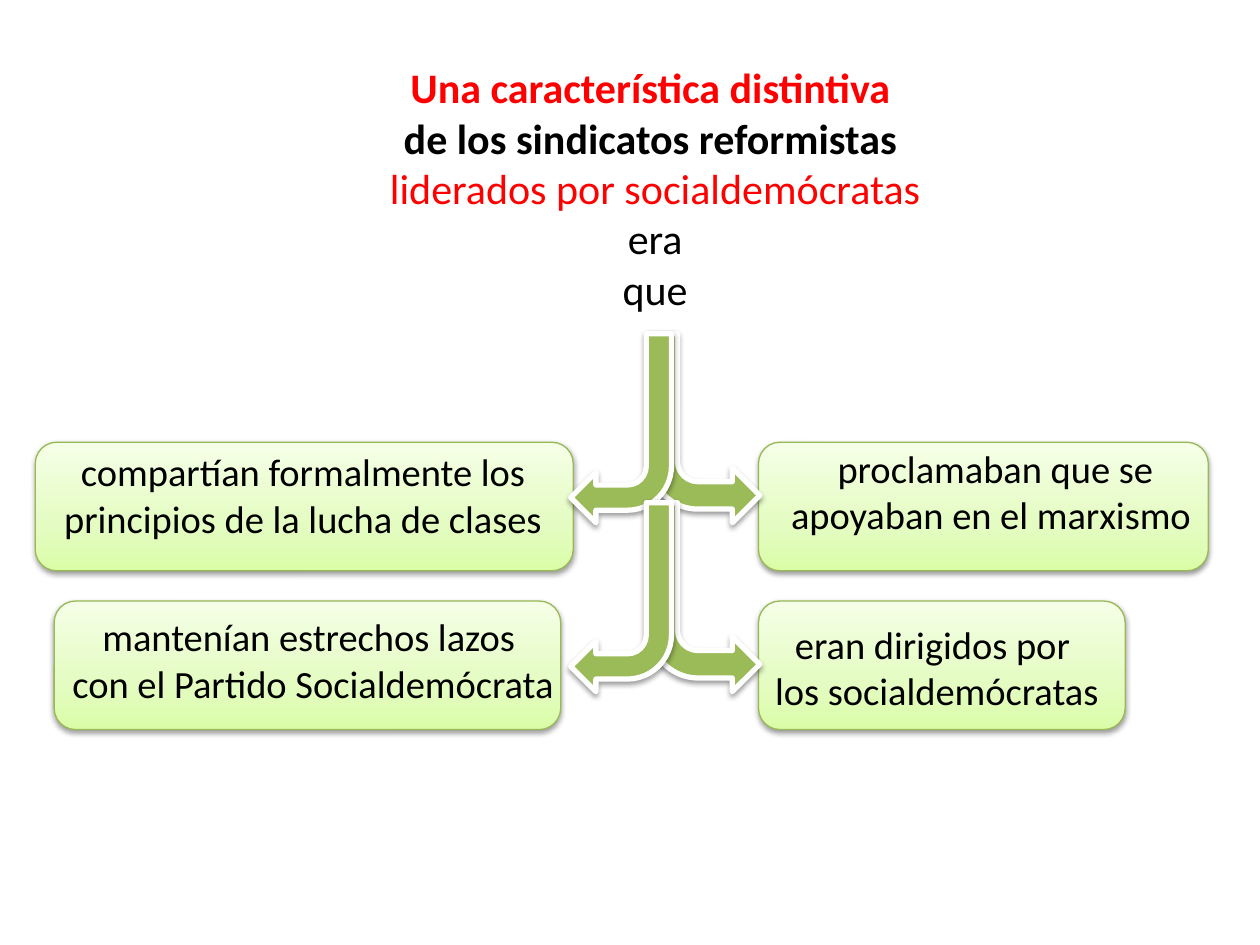
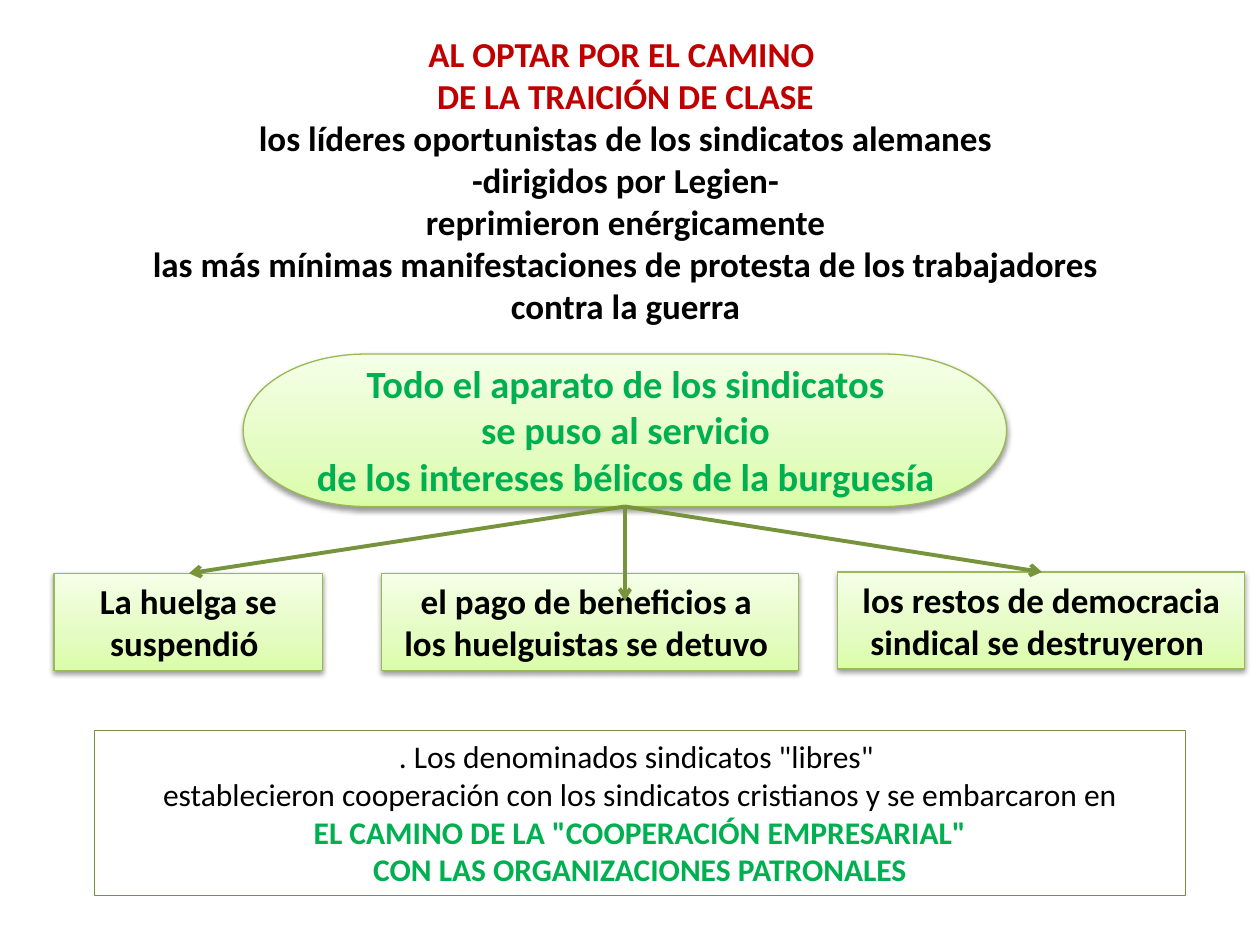
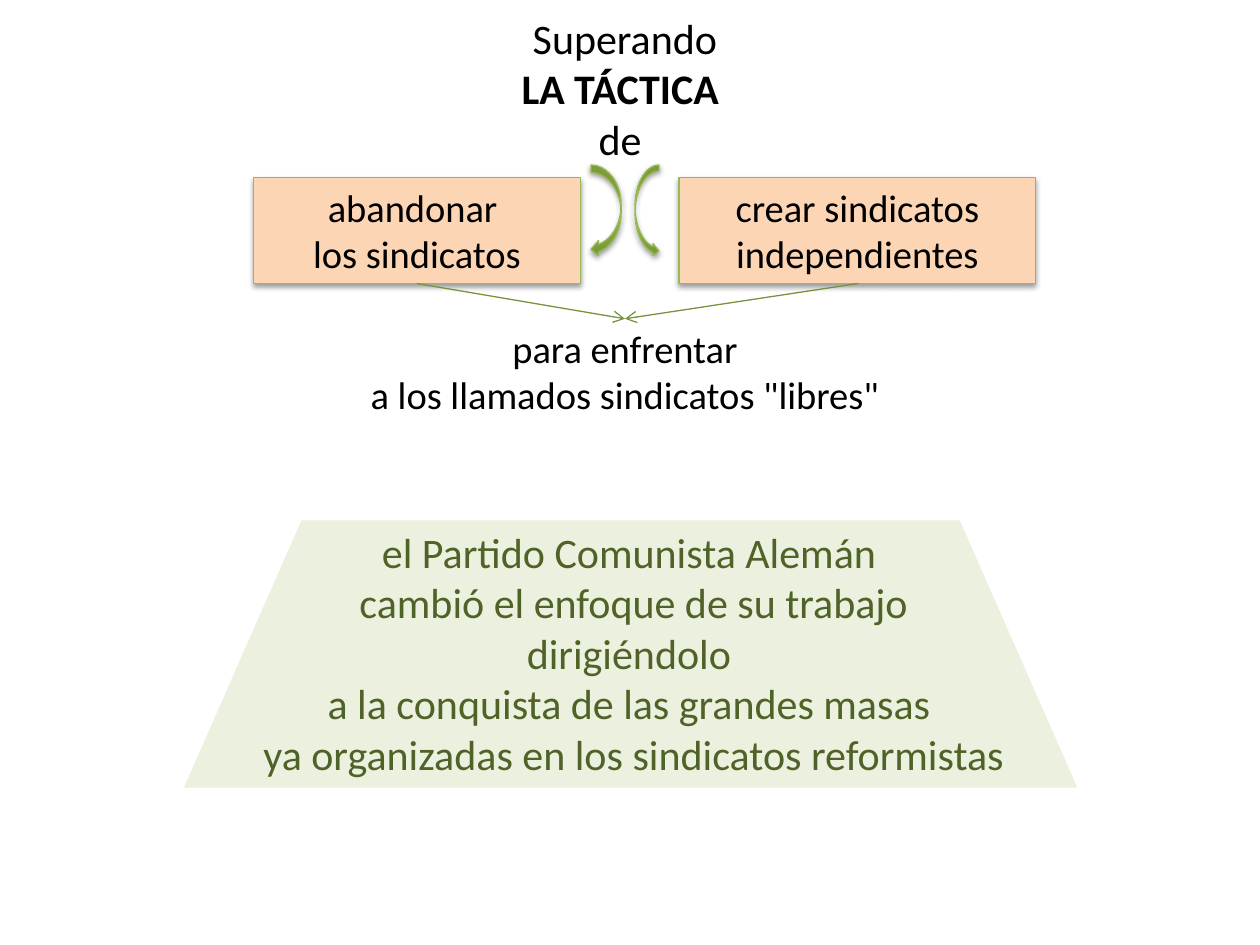
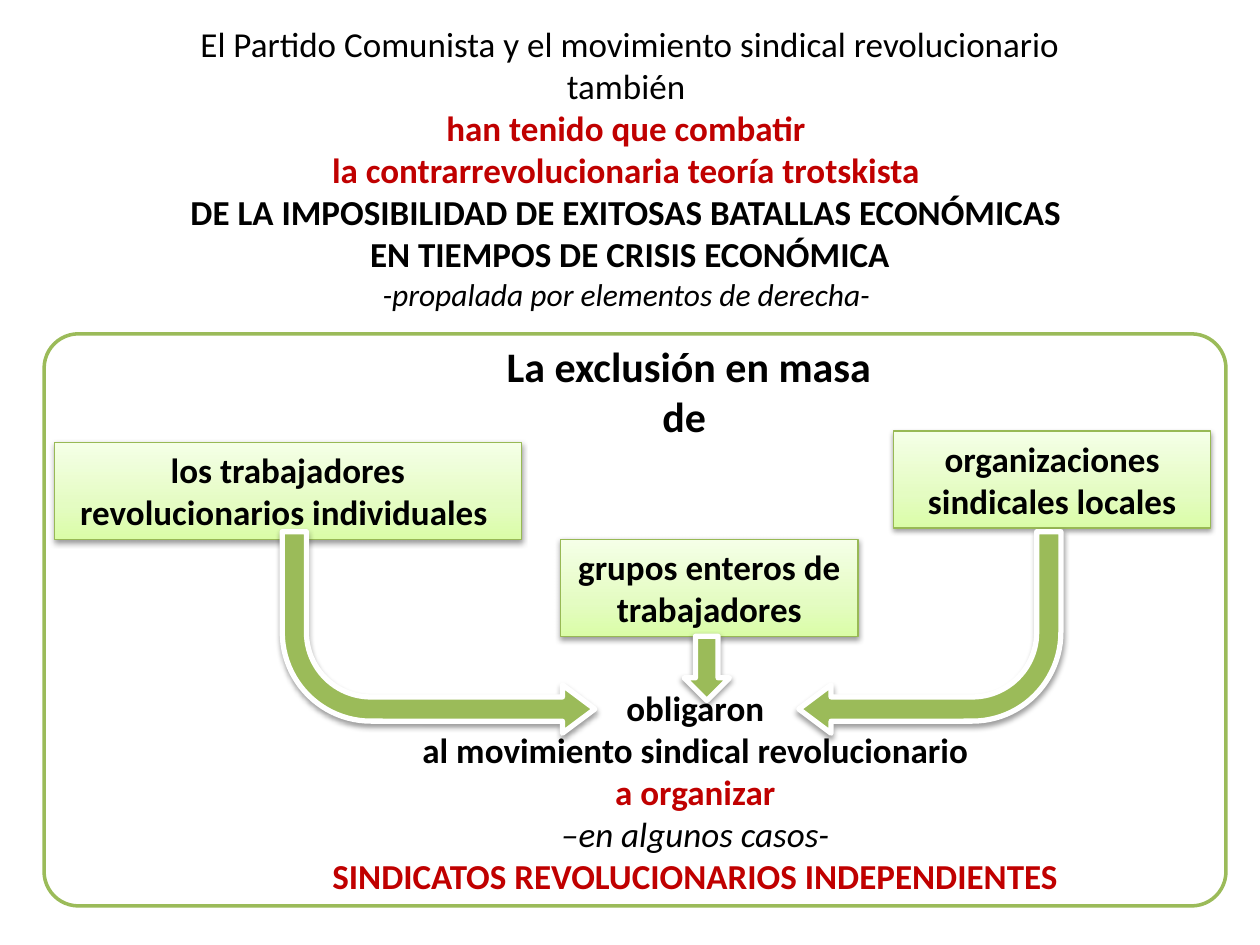
"""Build four slides on the reformist unions and the fight within them."""
import dataclasses
import typing

import lxml.etree
import pptx
import pptx.dml.color
import pptx.enum.dml
import pptx.enum.shapes
import pptx.enum.text
import pptx.oxml.ns
import pptx.util

PX = 9144
FONT = "Calibri"
Kind = pptx.enum.shapes.MSO_SHAPE
qn = pptx.oxml.ns.qn

HUES = {
    "ink": "000000", "white": "FFFFFF", "red": "FF0000", "wine": "C00000",
    "green": "00B050", "moss": "4F6228", "olive": "77933C", "edge": "98B955",
    "grass": "9BBB59", "peach": "FCD5B5", "pale": "EBF1DE",
    "lime": "DAFDA7", "lime mid": "E4FCC2", "lime top": "F5FFE7",
    "curl": "779737", "curl mid": "9BC348", "curl top": "9DC746",
}
FADES = {
    "lime": ((0, "lime"), (35, "lime mid"), (100, "lime top")),
    "curl": ((0, "curl"), (80, "curl mid"), (100, "curl top")),
}


class Look(typing.NamedTuple):
    """Fill, outline and shadow of a shape."""
    fill: str = ""
    edge: str = ""
    weight: float = 0.75
    shade: bool = False


LIME = Look("lime", "edge", shade=True)
PEACH = Look("peach", "edge", shade=True)
CURL = Look("curl", "edge", shade=True)
ARROW = Look("grass", "white", 3, True)
PANEL = Look("white", "grass", 2)
NOTE = Look(edge="olive")
LEAF = Look("pale")


class Line(typing.NamedTuple):
    """One paragraph and its format; size 0 takes that of its box."""
    text: str
    hue: str = "ink"
    bold: bool = False
    ital: bool = False
    size: int = 0


@dataclasses.dataclass
class Box:
    """A shape, or a text box when it has no look."""
    x: int
    y: int
    w: int
    h: int
    lines: typing.Sequence[Line] = ()
    size: int = 20
    look: typing.Optional[Look] = None
    kind: Kind = Kind.RECTANGLE
    flip: str = ""
    bends: typing.Sequence[float] = ()


@dataclasses.dataclass
class Link:
    """A straight arrow between two points."""
    x: int
    y: int
    to_x: int
    to_y: int
    weight: float = 0.75


def tint(name: str) -> pptx.dml.color.RGBColor:
    """Return a named colour."""
    return pptx.dml.color.RGBColor.from_string(HUES[name])


def block(*texts: str, hue: str = "ink", bold: bool = False) -> list[Line]:
    """Give several lines the same format."""
    return [Line(text, hue, bold) for text in texts]


def write(part, text: str, *, size: int, hue: str, bold: bool, ital: bool) -> None:
    """Put centred text in a paragraph."""
    part.alignment = pptx.enum.text.PP_ALIGN.CENTER
    run = part.add_run()
    run.text = text
    font = run.font
    font.name, font.size = FONT, pptx.util.Pt(size)
    font.bold, font.italic = bold, ital
    font.color.rgb = tint(hue)


def add(node, tag: str, **keys: typing.Any):
    """Append a drawing element with its attributes."""
    texts = {key: str(value) for key, value in keys.items()}
    return lxml.etree.SubElement(node, qn(tag), texts)


def shade(shape) -> None:
    """Cast a soft shadow straight down."""
    glow = add(shape._element.spPr.find(qn("a:effectLst")), "a:outerShdw",
               blurRad=40000, dist=20000, dir=5400000, rotWithShape=0)
    add(add(glow, "a:srgbClr", val=HUES["ink"]), "a:alpha", val=38000)


def paint(shape, look: Look) -> None:
    """Apply a look to a shape."""
    shape.shadow.inherit = False
    if look.fill in FADES:
        shape.fill.gradient()
        shape.fill.gradient_angle = 90
        stops = next(shape._element.spPr.iter(qn("a:gsLst")))
        stops.clear()
        for place, name in FADES[look.fill]:
            add(add(stops, "a:gs", pos=place * 1000), "a:srgbClr", val=HUES[name])
    elif look.fill:
        shape.fill.solid()
        shape.fill.fore_color.rgb = tint(look.fill)
    else:
        shape.fill.background()
    if look.edge:
        shape.line.color.rgb = tint(look.edge)
        shape.line.width = pptx.util.Pt(look.weight)
    else:
        shape.line.fill.background()
    if look.shade:
        shade(shape)


def draw_box(slide, box: Box) -> None:
    """Draw a shape or text box with its lines."""
    place = [side * PX for side in (box.x, box.y, box.w, box.h)]
    if box.look:
        shape = slide.shapes.add_shape(box.kind, *place)
        paint(shape, box.look)
    else:
        shape = slide.shapes.add_textbox(*place)
    for spot, bend in enumerate(box.bends):
        shape.adjustments[spot] = bend
    for axis in box.flip:
        shape._element.spPr.find(qn("a:xfrm")).set("flip" + axis, "1")
    frame = shape.text_frame
    frame.word_wrap = True
    frame.vertical_anchor = pptx.enum.text.MSO_ANCHOR.TOP
    for spot, line in enumerate(box.lines):
        part = frame.add_paragraph() if spot else frame.paragraphs[0]
        write(part, line.text, size=line.size or box.size, hue=line.hue,
              bold=line.bold, ital=line.ital)


def draw_link(slide, link: Link) -> None:
    """Draw an arrow."""
    ends = [end * PX for end in (link.x, link.y, link.to_x, link.to_y)]
    wire = slide.shapes.add_connector(pptx.enum.shapes.MSO_CONNECTOR.STRAIGHT, *ends)
    wire.line.color.rgb = tint("olive")
    wire.line.width = pptx.util.Pt(link.weight)
    props = wire._element.spPr
    add(props.find(qn("a:ln")), "a:tailEnd", type="arrow")
    add(props, "a:effectLst")


def traits() -> list:
    """Lay out the traits of the reformist unions."""
    cards = [Box(x, y, w, 102, look=LIME, kind=Kind.ROUNDED_RECTANGLE)
             for x, y, w in ((43, 477, 402), (602, 351, 357),
                             (602, 477, 291), (28, 351, 427))]
    head = Box(83, 44, 874, 252, [
        Line("Una característica distintiva ", "red", True),
        Line("de los sindicatos reformistas ", bold=True),
        Line("liderados por socialdemócratas", "red"),
        *block(" era ", "que")], 24)
    texts = [
        Box(35, 351, 411, 84, block(
            "compartían formalmente los principios de la lucha de clases"), 22),
        Box(43, 482, 411, 84, block(
            "mantenían estrechos lazos ", "con el Partido Socialdemócrata"), 22),
        Box(613, 348, 354, 84, block(
            "proclamaban que se", "apoyaban en el marxismo "), 22),
        Box(594, 488, 299, 84, block(
            "eran dirigidos por ", "los socialdemócratas"), 22)]
    bends = [Box(x, y, w, 150, look=ARROW, kind=Kind.BENT_ARROW, flip=flip)
             for y in (265, 399)
             for x, w, flip in ((516, 87, "V"), (453, 80, "HV"))]
    return [*cards, head, *texts, *bends]


def treason() -> list:
    """Lay out the choice of the union leaders and its effects."""
    oval = Box(193, 281, 606, 121, look=LIME, kind=Kind.FLOWCHART_TERMINATOR)
    head = Box(75, 21, 843, 276, [
        *block("AL OPTAR POR EL CAMINO ", "DE LA TRAICIÓN DE CLASE",
               hue="wine", bold=True),
        *block("los líderes oportunistas de los sindicatos alemanes",
               "-dirigidos por Legien-",
               " reprimieron enérgicamente ",
               "las más mínimas manifestaciones de protesta de los trabajadores",
               " contra la guerra ", bold=True)])
    core = Box(75, 281, 843, 121, block(
        "Todo el aparato de los sindicatos", " se puso al servicio ",
        "de los intereses bélicos de la burguesía", hue="green", bold=True), 22)
    note = Box(75, 580, 866, 131, [
        *block(". Los denominados sindicatos \"libres\" ",
               "establecieron cooperación con los sindicatos cristianos y se embarcaron en"),
        *block(" EL CAMINO DE LA \"COOPERACIÓN EMPRESARIAL\" ",
               "CON LAS ORGANIZACIONES PATRONALES", hue="green", bold=True)],
        18, NOTE)
    cards = [Box(x, y, w, 77, block(*texts, bold=True), look=LIME)
             for x, y, w, texts in (
                 (43, 455, 213, ["La huelga se suspendió "]),
                 (303, 455, 331, ["el pago de beneficios a ",
                                  "los huelguistas se detuvo "]),
                 (665, 454, 323, ["los restos de democracia sindical se destruyeron "]))]
    links = [Link(496, 402, x, y, 2.25)
             for x, y in ((150, 455), (827, 454), (496, 477))]
    return [oval, head, cards[0], core, note, *cards[1:], *links]


def tactic() -> list:
    """Lay out the change of tactic."""
    return [
        Box(146, 413, 709, 212, look=LEAF, kind=Kind.TRAPEZOID, bends=[0.44]),
        Box(59, 5, 874, 131, [Line("Superando"), Line(" LA TÁCTICA  ", bold=True),
                              Line("de ")], 24),
        Box(66, 413, 874, 212, block(
            "el Partido Comunista Alemán ", "cambió el enfoque de su trabajo",
            "dirigiéndolo ", "a la conquista de las grandes masas ",
            "ya organizadas en los sindicatos reformistas", hue="moss"), 24),
        Box(201, 141, 260, 84, block("abandonar ", "los sindicatos"), 22, PEACH),
        Box(59, 253, 874, 84, block(
            "para enfrentar", " a los llamados sindicatos \"libres\" "), 22),
        Box(539, 141, 283, 84, block("crear sindicatos independientes"), 22, PEACH),
        *[Box(x, 131, w, 73, look=CURL, kind=Kind.CURVED_LEFT_ARROW, flip=flip)
          for x, w, flip in ((469, 24, ""), (504, 19, "H"))],
        *[Link(x, 225, 496, 253) for x in (681, 331)]]


def ouster() -> list:
    """Lay out the mass exclusion and what it led to."""
    panel = Box(35, 265, 938, 454, look=PANEL, kind=Kind.ROUNDED_RECTANGLE,
                bends=[0.06])
    head = Box(51, 13, 898, 249, [
        *block("El Partido Comunista y el movimiento sindical revolucionario",
               "también "),
        *block("han tenido que combatir ",
               "la contrarrevolucionaria teoría trotskista ",
               hue="wine", bold=True),
        *block("DE LA IMPOSIBILIDAD DE EXITOSAS BATALLAS ECONÓMICAS ",
               "EN TIEMPOS DE CRISIS ECONÓMICA", bold=True),
        Line("-propalada por elementos de derecha- ", ital=True, size=18)])
    result = Box(106, 540, 898, 178, [
        *block("obligaron ", "al movimiento sindical revolucionario ", bold=True),
        Line("a organizar ", "wine", True),
        Line("–en algunos casos- ", ital=True),
        Line("SINDICATOS REVOLUCIONARIOS INDEPENDIENTES ", "wine", True)])
    cause = Box(350, 265, 386, 91, block(" La exclusión en masa", "de", bold=True), 24)
    cards = [Box(x, y, w, 77, block(text, bold=True), look=LIME)
             for x, y, w, text in (
                 (43, 351, 371, "los trabajadores revolucionarios individuales "),
                 (709, 342, 252, "organizaciones sindicales locales"),
                 (445, 428, 236, "grupos enteros de trabajadores"))]
    bends = [Box(x, 422, w, 160, look=ARROW, kind=Kind.BENT_ARROW, flip=flip,
                 bends=[0.12, 0.12, 0.16, 0.44])
             for x, w, flip in ((224, 248, "V"), (634, 208, "HV"))]
    down = Box(543, 505, 36, 51, look=ARROW, kind=Kind.DOWN_ARROW)
    return [panel, head, result, cause, *cards, *bends, down]


def main() -> None:
    """Build and save the slides."""
    deck = pptx.Presentation()
    deck.slide_width, deck.slide_height = 1000 * PX, 750 * PX
    for plan in (traits, treason, tactic, ouster):
        slide = deck.slides.add_slide(deck.slide_layouts[6])
        for item in plan():
            if isinstance(item, Link):
                draw_link(slide, item)
            else:
                draw_box(slide, item)
    deck.save("out.pptx")


if __name__ == "__main__":
    main()
